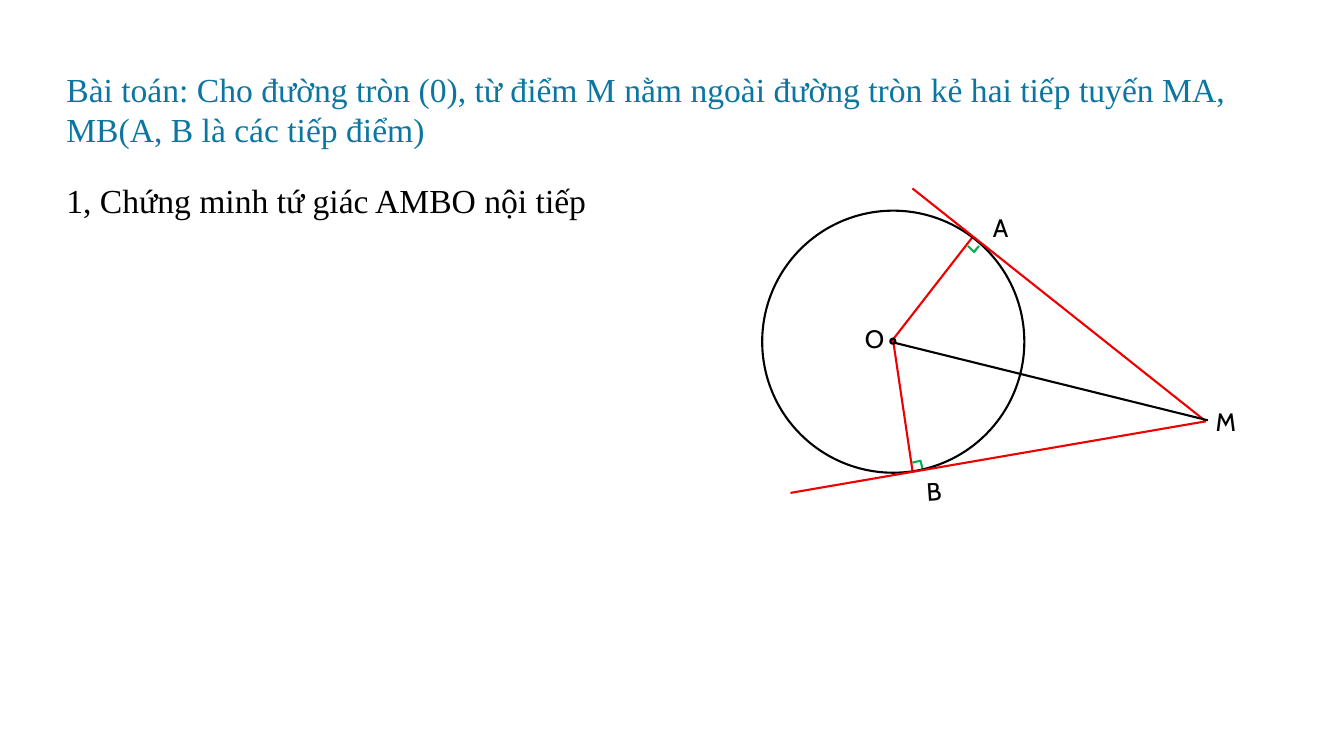
from pptx import Presentation
from pptx.dml.color import RGBColor
from pptx.enum.shapes import MSO_CONNECTOR, MSO_SHAPE
from pptx.enum.text import MSO_AUTO_SIZE
from pptx.oxml.ns import qn
from pptx.util import Inches, Pt
from lxml import etree

BLACK = RGBColor(0x00, 0x00, 0x00)
RED = RGBColor(0xEE, 0x00, 0x00)
GREEN = RGBColor(0x00, 0xB0, 0x50)
BLUE = RGBColor(0x0B, 0x76, 0xA0)
STRAIGHT = MSO_CONNECTOR.STRAIGHT
OVAL = MSO_SHAPE.OVAL
FIT_SHAPE = MSO_AUTO_SIZE.SHAPE_TO_FIT_TEXT


def write(tf, text, font="Times New Roman", size=24, color=BLACK):
    r = tf.paragraphs[0].add_run()
    r.text = text
    r.font.name = font
    r.font.size = Pt(size)
    r.font.color.rgb = color


class Figure:
    """Draws on one slide with a shared line width."""
    width = Pt(1.5)

    def __init__(self, s):
        self.s = s

    def outline(self, sp, color):
        sp.line.color.rgb = color
        sp.line.width = self.width

    def text(self, text, x, y, w, h, wrap=True, rotation=0, **fmt):
        sp = self.s.shapes.add_textbox(Inches(x), Inches(y), Inches(w), Inches(h))
        sp.rotation = rotation
        tf = sp.text_frame
        tf.word_wrap = wrap
        tf.auto_size = FIT_SHAPE
        write(tf, text, **fmt)

    def label(self, text, x, y, rotation=0):
        self.text(text, x, y, 0.37, 0.4, rotation=rotation, font="Cabin", size=18)

    def segment(self, start, end, color=RED):
        x1, y1, x2, y2 = (Inches(v) for v in (*start, *end))
        sp = self.s.shapes.add_connector(STRAIGHT, x1, y1, x2, y2)
        self.outline(sp, color)
        etree.SubElement(sp._element.spPr, qn("a:effectLst"))

    def circle(self, x, y, d, fill=None):
        sp = self.s.shapes.add_shape(OVAL, Inches(x), Inches(y), Inches(d), Inches(d))
        sp.shadow.inherit = False
        if fill is None:
            sp.fill.background()
        else:
            sp.fill.solid()
            sp.fill.fore_color.rgb = fill
        self.outline(sp, BLACK)

    def right_angle(self, *points):
        pts = [(Inches(x), Inches(y)) for x, y in points]
        builder = self.s.shapes.build_freeform(*pts[0])
        builder.add_line_segments(pts[1:], close=False)
        sp = builder.convert_to_shape()
        sp.shadow.inherit = False
        sp.fill.background()
        self.outline(sp, GREEN)


def main():
    prs = Presentation()
    prs.slide_width, prs.slide_height = Inches(13.33), Inches(7.5)
    fig = Figure(prs.slides.add_slide(prs.slide_layouts[6]))
    m = (11.96, 4.18)

    # Right-angle marks at B and A
    fig.right_angle((9.05, 4.59), (9.13, 4.57), (9.15, 4.65))
    fig.right_angle((9.6, 2.44), (9.66, 2.5), (9.71, 2.44))

    # Circle, radii and tangents
    fig.segment((8.84, 3.39), (9.64, 2.36))
    fig.circle(7.56, 2.09, 2.6)
    fig.segment((7.84, 4.89), m)
    fig.segment((8.86, 3.39), (9.05, 4.67))
    fig.circle(8.83, 3.36, 0.05, fill=RED)
    fig.segment((9.05, 1.87), m)

    # Point names
    fig.label("O", 8.48, 3.16)
    fig.label("A", 9.75, 2.06)
    fig.label("B", 9.09, 4.67, rotation=355.9)
    fig.label("M", 11.96, 3.98)

    # Problem and question
    fig.text("Bài toán: Cho đường tròn (0), từ điểm M nằm ngoài đường tròn "
             "kẻ hai tiếp tuyến MA, MB(A, B là các tiếp điểm)",
             0.56, 0.63, 12.11, 0.91, color=BLUE)
    fig.text("1, Chứng minh tứ giác AMBO nội tiếp", 0.56, 1.74, 5.39, 0.5, wrap=False)

    # Line from the centre to M
    fig.segment((8.87, 3.4), (11.98, 4.17), BLACK)

    prs.save("out.pptx")


if __name__ == "__main__":
    main()
